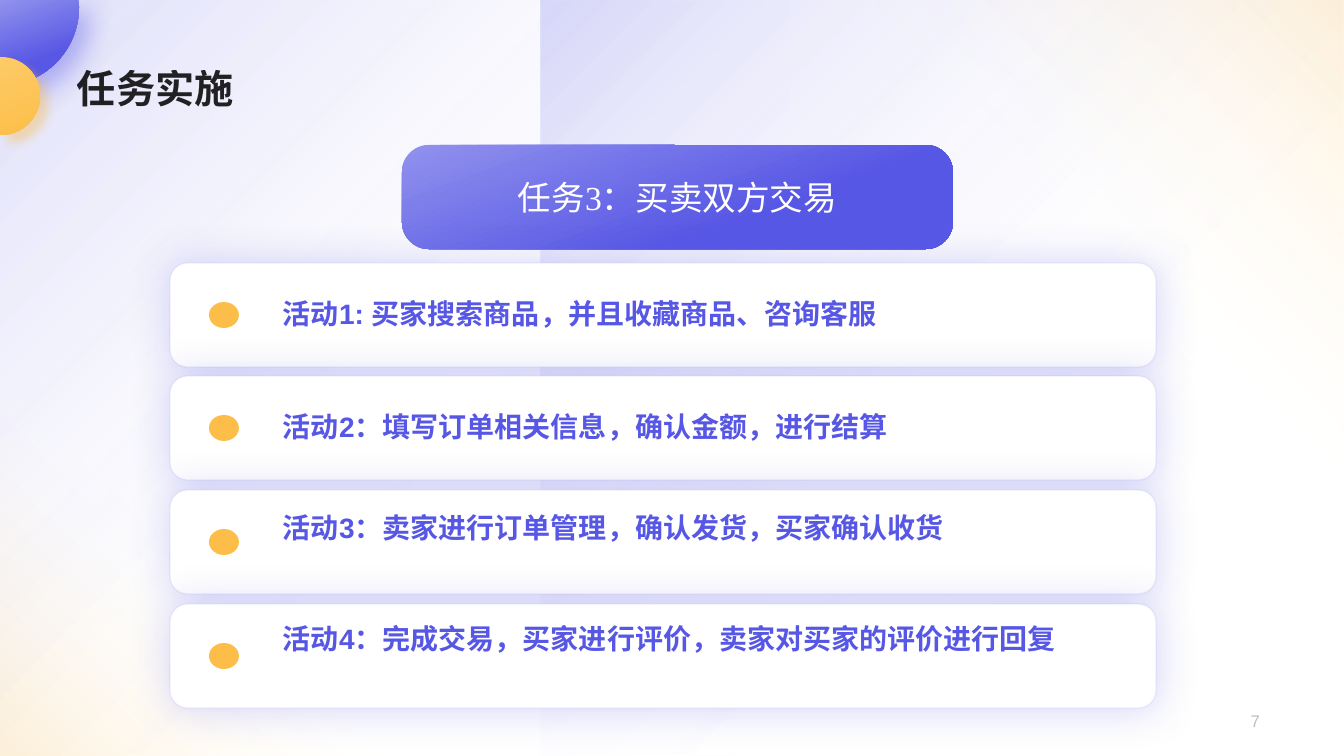
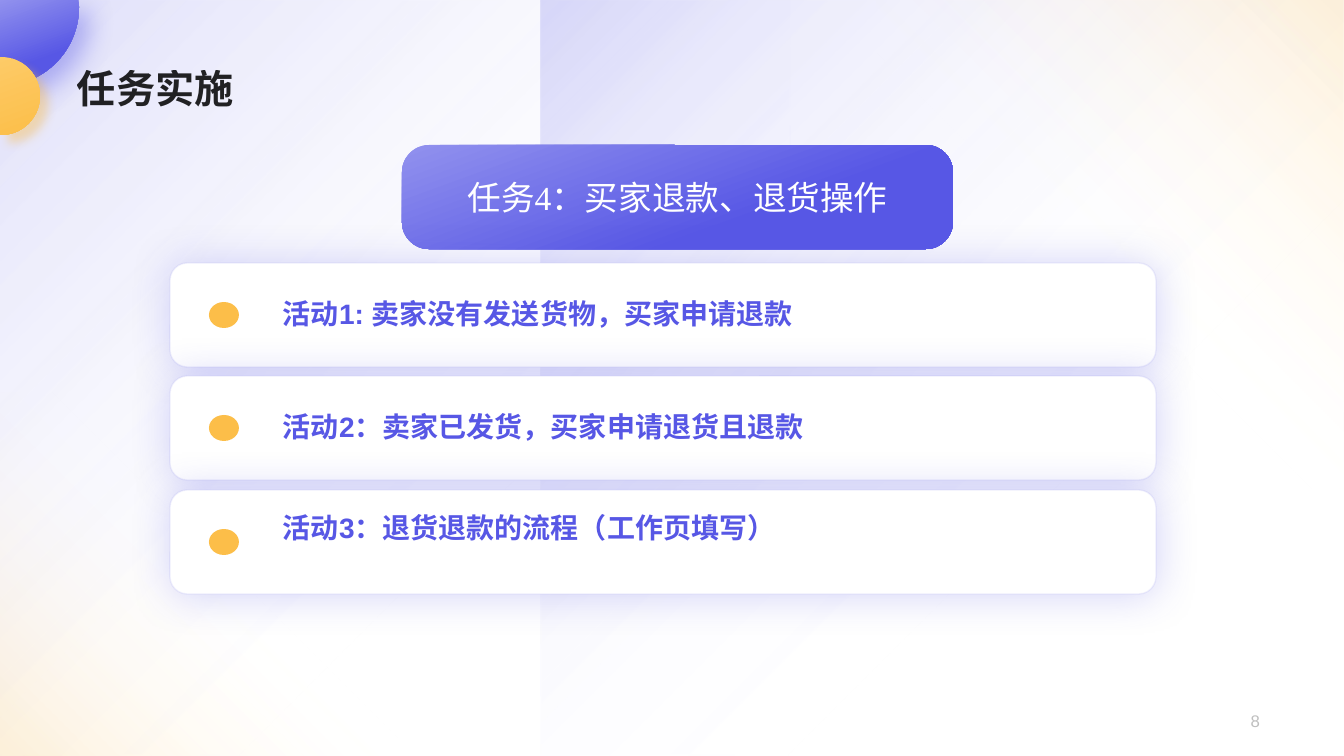
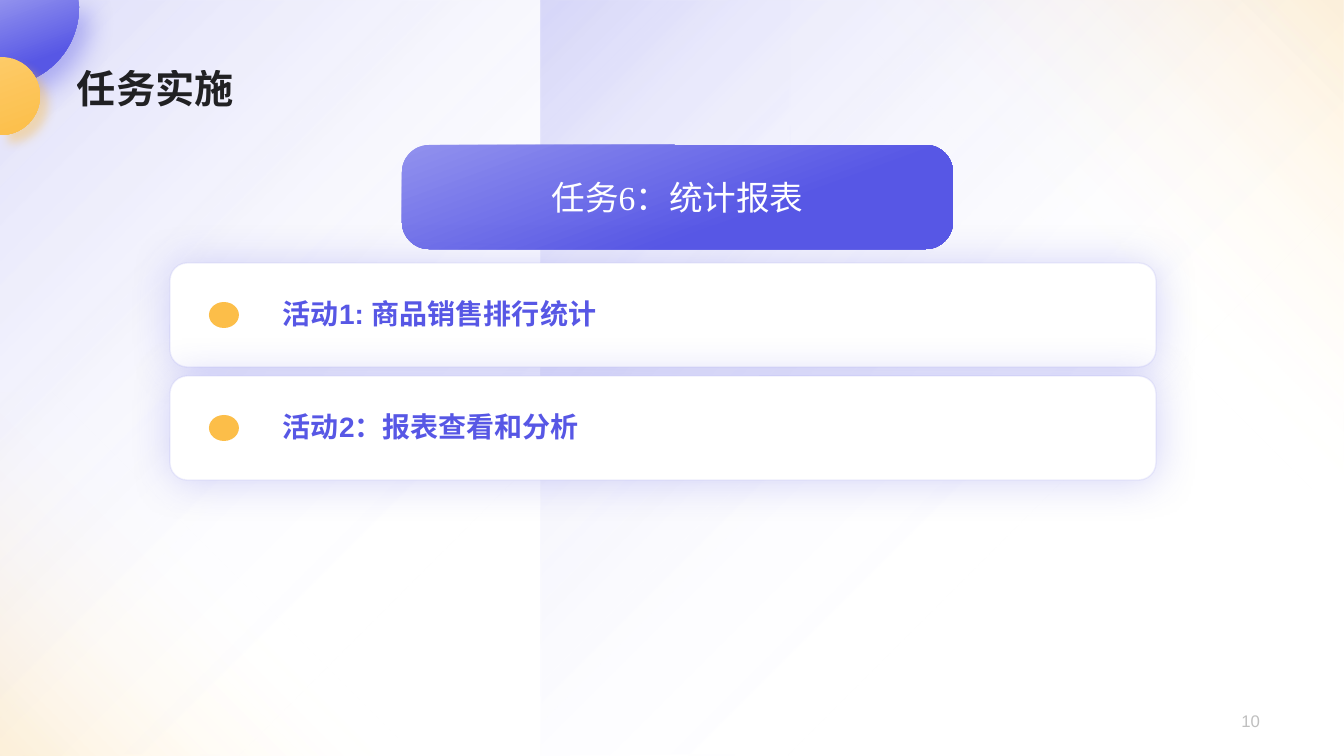
from math import cos, radians, sin

from lxml import etree
from pptx import Presentation
from pptx.dml.color import RGBColor
from pptx.enum.shapes import MSO_SHAPE
from pptx.enum.text import MSO_ANCHOR, MSO_AUTO_SIZE, PP_ALIGN
from pptx.oxml import parse_xml
from pptx.oxml.ns import nsdecls, qn
from pptx.util import Pt

RECT, ROUND, OVAL = MSO_SHAPE.RECTANGLE, MSO_SHAPE.ROUNDED_RECTANGLE, MSO_SHAPE.OVAL
TOP, MID = MSO_ANCHOR.TOP, MSO_ANCHOR.MIDDLE
LEFT, MIDDLE, RIGHT = PP_ALIGN.LEFT, PP_ALIGN.CENTER, PP_ALIGN.RIGHT
FIXED, GROW = MSO_AUTO_SIZE.NONE, MSO_AUTO_SIZE.SHAPE_TO_FIT_TEXT

TITLE = "任务实施"
SLIDES = [
    ("7", "任务3：买卖双方交易", [
        "活动1: 买家搜索商品，并且收藏商品、咨询客服",
        "活动2：填写订单相关信息，确认金额，进行结算",
        "活动3：卖家进行订单管理，确认发货，买家确认收货",
        "活动4：完成交易，买家进行评价，卖家对买家的评价进行回复",
    ]),
    ("8", "任务4：买家退款、退货操作", [
        "活动1: 卖家没有发送货物，买家申请退款",
        "活动2：卖家已发货，买家申请退货且退款",
        "活动3：退货退款的流程（工作页填写）",
    ]),
    ("10", "任务6：统计报表", [
        "活动1: 商品销售排行统计",
        "活动2：报表查看和分析",
    ]),
]

HEX = {
    "blue": "5757E5", "pale": "9191EE", "gold": "FCBE49", "sand": "FDCB67",
    "white": "FFFFFF", "black": "000000", "grey": "BFBFBF",
}
# Gradient stops: position %, colour, opacity %
GLOW = [(0, "blue", 20), (65, "white", 0)]
CORNER = [(45, "white", 0), (98, "gold", 20)]
BLUES = [(0, "pale", 100), (66, "blue", 100)]
GOLDS = [(0, "sand", 100), (100, "gold", 100)]
# Box, stops, angle (None is radial from the top left), flipped
WASHES = [
    ((0, 0, 790, 756), GLOW, None, False),
    ((877, 0, 467, 488), CORNER, 315, False),
    ((-2, 393, 404, 363), CORNER, 315, True),
    ((541, 0, 803, 756), GLOW, None, True),
]
# Centre, radius, first angle, edge points, stops, shadow
DISCS = [
    ((0, 7), 79, 0, [(0, 0), (78, 0)], BLUES, ("blue", 40, 19, 11, 45)),
    ((1, 96), 39, -90, [(0, 135), (0, 57)], GOLDS, ("gold", 40, 7, 8, 45)),
]
CARD_TOP, CARD_STEP = 263, 341 / 3
TEXT_DROP = [29, 29, 16, 13]


def px(n):
    return round(n * 914400 / 100.8)


def box(*sides):
    return [px(n) for n in sides]


def rgb(name):
    return RGBColor.from_string(HEX[name])


def tint(name, alpha):
    return (f'<a:srgbClr val="{HEX[name]}"><a:alpha val="{alpha * 1000}"/>'
            '</a:srgbClr>')


def fade(shape, stops, angle):
    """Gradient fill with opacity, no line."""
    shape.line.fill.background()
    shape.fill.solid()
    marks = "".join(f'<a:gs pos="{pos * 1000}">{tint(name, alpha)}</a:gs>'
                    for pos, name, alpha in stops)
    if angle is None:
        way = ('<a:path path="circle"><a:fillToRect r="100000" b="100000"/>'
               '</a:path>')
    else:
        way = f'<a:lin ang="{angle * 60000}" scaled="0"/>'
    props = shape.element.spPr
    props.replace(props.find(qn("a:solidFill")), parse_xml(
        f'<a:gradFill {nsdecls("a")} rotWithShape="1">'
        f'<a:gsLst>{marks}</a:gsLst>{way}</a:gradFill>'))


def cast(shape, name, alpha, blur, dist, angle):
    """Outer shadow; blur and distance in points."""
    shape.shadow.inherit = False
    shape.element.spPr.find(qn("a:effectLst")).append(parse_xml(
        f'<a:outerShdw {nsdecls("a")} blurRad="{Pt(blur)}" dist="{Pt(dist)}" '
        f'dir="{angle * 60000}" algn="ctr" rotWithShape="0">'
        f'{tint(name, alpha)}</a:outerShdw>'))


def add(shapes, kind, *sides):
    shape = shapes.add_shape(kind, *box(*sides))
    shape.shadow.inherit = False
    return shape


def write(shape, text, size, color, font="Arial", bold=False, align=LEFT,
          anchor=TOP, fit=FIXED):
    frame = shape.text_frame
    frame.word_wrap, frame.auto_size = True, fit
    frame.vertical_anchor = anchor
    par = frame.paragraphs[0]
    par.alignment = align
    run = par.add_run()
    run.text = text
    run.font.name, run.font.size, run.font.bold = font, Pt(size), bold
    run.font.color.rgb = rgb(color)
    return run


def dress(layout, slide):
    """Draw the shared backdrop on a slide and move it to the layout."""
    parts = []
    for sides, stops, angle, flip in WASHES:
        wash = add(slide.shapes, RECT, *sides)
        fade(wash, stops, angle)
        if flip:
            frame = wash.element.spPr.find(qn("a:xfrm"))
            frame.set("flipH", "1")
            frame.set("flipV", "1")
        parts.append(wash)
    for (x, y), radius, first, edge, stops, shade in DISCS:
        turns = [radians(a) for a in range(first, 91, 3)]
        arc = [(x + radius * cos(t), y + radius * sin(t)) for t in turns]
        if first == 0:
            arc.append((0, y + radius))
        dots = [box(*dot) for dot in arc + edge]
        path = slide.shapes.build_freeform(*dots[0])
        path.add_line_segments(dots[1:], close=True)
        disc = path.convert_to_shape()
        fade(disc, stops, 70)
        cast(disc, *shade)
        parts.append(disc)
    for spot, part in enumerate(parts, 2):
        layout.shapes.element.insert(spot, part.element)


def head(slide, number):
    title = slide.shapes.title
    title.left, title.top, title.width, title.height = box(73, 65, 599, 55)
    frame = title.text_frame
    frame.margin_left, frame.margin_right = box(4, 10)
    frame.margin_top = frame.margin_bottom = px(5)
    run = write(title, TITLE, 28, "black", bold=True)
    frame.paragraphs[0].line_spacing = 0.9
    color = run.font.fill._xPr.find(qn("a:solidFill"))[0]
    etree.SubElement(color, qn("a:alpha")).set("val", "85000")
    note = slide.shapes.add_textbox(*box(968, 701, 302, 40))
    write(note, number, 12, "grey", align=RIGHT, anchor=MID)


def banner(slide, text):
    shape = add(slide.shapes, ROUND, 402, 145, 551, 104)
    shape.adjustments[0] = 0.26
    fade(shape, BLUES, 70)
    write(shape, text, 24, "white", "Times New Roman", align=MIDDLE, anchor=MID)


def card(slide, row, text):
    top = CARD_TOP + int(row * CARD_STEP)
    shapes = slide.shapes.add_group_shape().shapes
    panel = add(shapes, ROUND, 170, top, 986, 104)
    panel.fill.solid()
    panel.fill.fore_color.rgb = rgb("white")
    panel.line.width = Pt(1)
    panel.line.color.rgb = rgb("pale")
    ink = panel.line._ln.find(qn("a:solidFill"))[0]
    etree.SubElement(ink, qn("a:alpha")).set("val", "15000")
    cast(panel, "blue", 25, 30, 0, 0)
    label = shapes.add_textbox(*box(273, top + TEXT_DROP[row], 850, 44))
    write(label, text, 20, "blue", bold=True, fit=GROW)
    dot = add(shapes, OVAL, 209, top + 39, 30, 26)
    dot.fill.solid()
    dot.fill.fore_color.rgb = rgb("gold")
    dot.line.fill.background()


def main():
    deck = Presentation()
    deck.slide_width, deck.slide_height = box(1344, 756)
    layout = deck.slide_layouts[5]
    for place, (number, task, steps) in enumerate(SLIDES):
        slide = deck.slides.add_slide(layout)
        if place == 0:
            dress(layout, slide)
        head(slide, number)
        banner(slide, task)
        for row, text in enumerate(steps):
            card(slide, row, text)
    deck.save("out.pptx")


if __name__ == "__main__":
    main()
